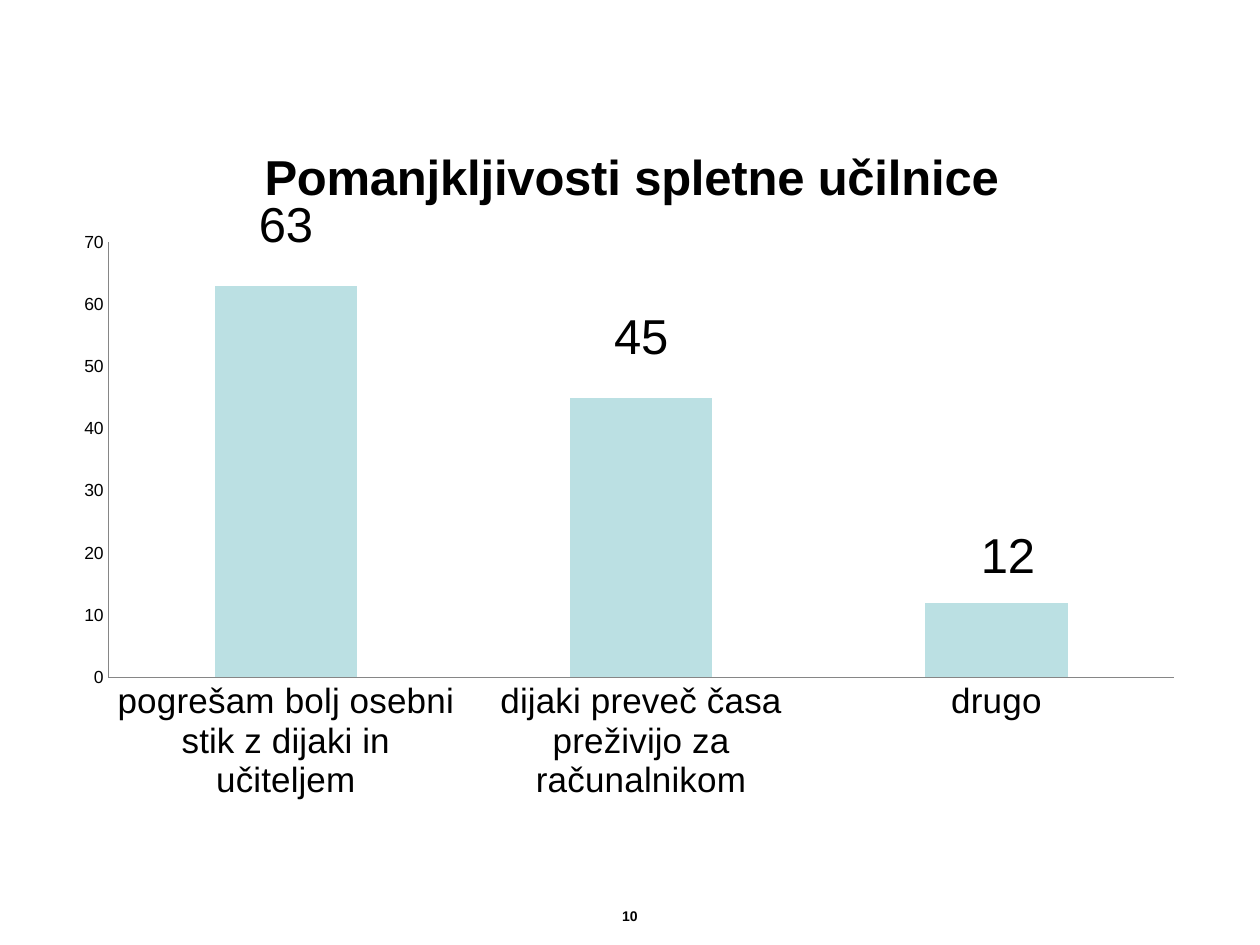
from lxml import etree
from pptx import Presentation
from pptx import util as u
from pptx.chart import data as cd
from pptx.dml.color import RGBColor
from pptx.enum import chart as ch, text
from pptx.oxml import ns

BLACK = RGBColor(0x00, 0x00, 0x00)
GRAY = RGBColor(0x86, 0x86, 0x86)
AQUA = RGBColor(0xBB, 0xE0, 0xE3)

REASONS = {
    "pogrešam bolj osebni stik z dijaki in učiteljem": 63,
    "dijaki preveč časa preživijo za računalnikom": 45,
    "drugo": 12,
}
LABEL_SHIFTS = [(0, -0.04), (0, -0.04), (0.01, -0.02)]


def manual_layout(**values):
    """Return a c:layout element; values are fractions of the chart's size."""
    layout = etree.Element(ns.qn("c:layout"))
    manual = etree.SubElement(layout, ns.qn("c:manualLayout"))
    for name, value in values.items():
        etree.SubElement(manual, ns.qn(f"c:{name}")).set("val", str(value))
    return layout


def set_layout(parent, before, **values):
    """Replace the layout of parent, placing it after the child named before."""
    for old in parent.findall(ns.qn("c:layout")):
        parent.remove(old)
    layout = manual_layout(**values)
    if before is None:
        parent.insert(0, layout)
    else:
        parent.find(ns.qn(before)).addnext(layout)


class Deck:
    """Holds the text style and the current slide."""

    font = "Arial"

    def __init__(self, width, height):
        self.prs = Presentation()
        self.prs.slide_width, self.prs.slide_height = width, height
        self.s = self.prs.slides.add_slide(self.prs.slide_layouts[6])

    def style(self, font, size, bold=False):
        font.name, font.size, font.bold = self.font, u.Pt(size), bold
        font.color.rgb = BLACK

    def text(self, words, left, top, width, height, size):
        sp = self.s.shapes.add_textbox(left, top, width, height)
        tf = sp.text_frame
        tf.word_wrap = True
        tf.vertical_anchor = text.MSO_ANCHOR.MIDDLE
        p = tf.paragraphs[0]
        p.text = words
        p.alignment = text.PP_ALIGN.CENTER
        self.style(p.font, size, bold=True)

    def column_chart(self, title, values, left, top, width, height):
        data = cd.CategoryChartData()
        data.categories = list(values)
        data.add_series("Series 1", list(values.values()))
        chart = self.s.shapes.add_chart(
            ch.XL_CHART_TYPE.COLUMN_CLUSTERED, left, top, width, height, data
        ).chart
        self.style(chart.font, 10)
        chart.has_legend = False
        self.title(chart, title)
        self.axis(chart.category_axis, 20)
        self.axis(chart.value_axis, 10)
        chart.value_axis.minimum_scale = 0
        chart.value_axis.maximum_scale = 70
        chart.value_axis.major_unit = 10
        self.columns(chart.plots[0])
        plot_area = chart.plots[0]._element.getparent()
        set_layout(plot_area, None, layoutTarget="inner", xMode="edge",
                   yMode="edge", x=0.04, y=0.18, w=0.94, h=0.62)

    def title(self, chart, words):
        chart.has_title = True
        p = chart.chart_title.text_frame.paragraphs[0]
        p.text = words
        self.style(p.font, 28, bold=True)
        set_layout(chart.chart_title._element, "c:tx",
                   xMode="edge", yMode="edge", x=0.17, y=0.03)

    def axis(self, axis, size):
        axis.has_major_gridlines = False
        axis.major_tick_mark = axis.minor_tick_mark = ch.XL_TICK_MARK.NONE
        axis.format.line.color.rgb = GRAY
        axis.format.line.width = u.Pt(0.75)
        self.style(axis.tick_labels.font, size)

    def columns(self, plot):
        plot.gap_width = 150
        plot.vary_by_categories = False
        series = plot.series[0]
        series.format.fill.solid()
        series.format.fill.fore_color.rgb = AQUA
        labels = series.data_labels
        labels.show_value = True
        labels.position = ch.XL_LABEL_POSITION.OUTSIDE_END
        self.style(labels.font, 28)
        for i in range(len(LABEL_SHIFTS)):
            label = series.points[i].data_label
            self.style(label.font, 28)
            label.position = ch.XL_LABEL_POSITION.OUTSIDE_END
        for d_lbl, (x, y) in zip(series._element.iter(ns.qn("c:dLbl")), LABEL_SHIFTS):
            set_layout(d_lbl, "c:idx", x=x, y=y)
        for leader in series._element.iter(ns.qn("c:showLeaderLines")):
            leader.set("val", "0")


def main():
    deck = Deck(u.Cm(25.4), u.Cm(19.05))
    deck.text("10", u.Cm(1.3), u.Cm(17.86), u.Cm(22.8), u.Cm(1.19), 8)
    deck.column_chart("Pomanjkljivosti spletne učilnice", REASONS,
                      u.Cm(1.27), u.Cm(2.34), u.Cm(22.86), u.Cm(14.15))
    deck.prs.save("out.pptx")


if __name__ == "__main__":
    main()
